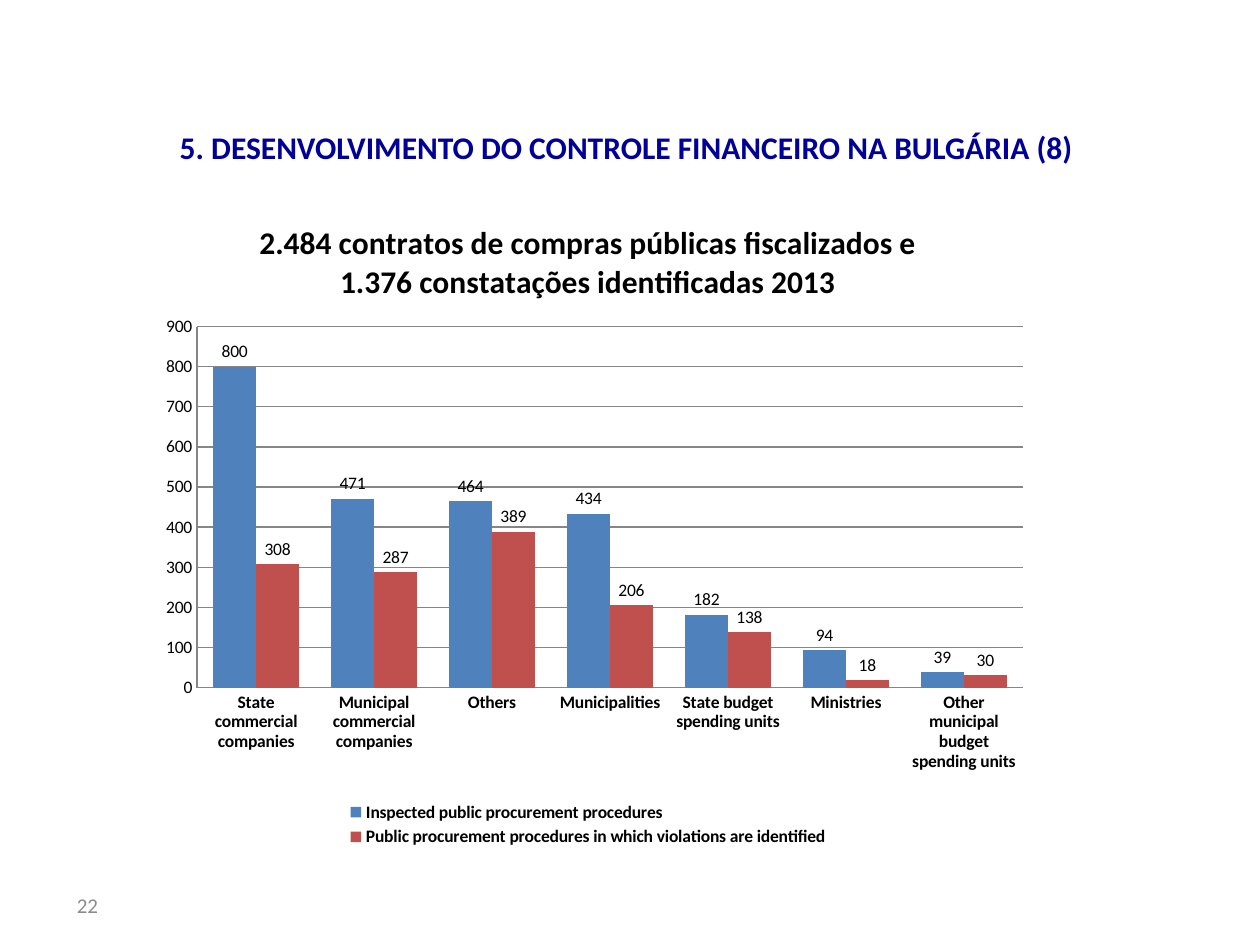
from lxml import etree
from pptx import Presentation
from pptx.chart.data import CategoryChartData as ChartData
from pptx.dml.color import RGBColor
from pptx.enum.chart import XL_CHART_TYPE as Kind, XL_LABEL_POSITION as Spot
from pptx.enum.chart import XL_LEGEND_POSITION as Side, XL_TICK_MARK as Tick
from pptx.enum.text import MSO_ANCHOR as Anchor, PP_ALIGN as Align
from pptx.oxml.ns import qn
from pptx.util import Cm, Pt

NAVY = RGBColor(0x00, 0x00, 0x99)
GREY = RGBColor(0x8C, 0x8C, 0x8C)
LINE = RGBColor(0x86, 0x86, 0x86)
BLACK = RGBColor(0x00, 0x00, 0x00)
BLUE = RGBColor(0x4F, 0x81, 0xBD)
RED = RGBColor(0xC0, 0x50, 0x4D)


def style(font, size, color, bold=False):
    font.name = "Calibri"
    font.size = Pt(size)
    font.bold = bold
    font.color.rgb = color


deck = Presentation()
deck.slide_width = Cm(25.4)
deck.slide_height = Cm(19.05)
slide = deck.slides.add_slide(deck.slide_layouts[6])

texts = [
    ("22", 1.3, 17.73, 5.92, 12, GREY, False, Align.LEFT),
    ("5. DESENVOLVIMENTO DO CONTROLE FINANCEIRO NA BULGÁRIA (8)",
     2.53, 2.46, 20.19, 18, NAVY, True, Align.CENTER),
]
for text, left, top, width, size, color, bold, align in texts:
    box = slide.shapes.add_textbox(Cm(left), Cm(top), Cm(width), Cm(1.02))
    frame = box.text_frame
    frame.word_wrap = True
    frame.vertical_anchor = Anchor.MIDDLE
    para = frame.paragraphs[0]
    para.alignment = align
    run = para.add_run()
    run.text = text
    style(run.font, size, color, bold)

data = ChartData()
data.categories = [
    "State commercial companies", "Municipal commercial companies", "Others",
    "Municipalities", "State budget spending units", "Ministries",
    "Other municipal budget spending units",
]
data.add_series("Inspected public procurement procedures",
                [800, 471, 464, 434, 182, 94, 39])
data.add_series("Public procurement procedures in which violations are identified",
                [308, 287, 389, 206, 138, 18, 30])
chart = slide.shapes.add_chart(Kind.COLUMN_CLUSTERED, Cm(2.9), Cm(3.94),
                               Cm(17.9), Cm(13.23), data).chart
style(chart.font, 10, BLACK)

chart.has_title = True
run = chart.chart_title.text_frame.paragraphs[0].add_run()
run.text = ("2.484 contratos de compras públicas fiscalizados e "
            "1.376 constatações identificadas 2013")
style(run.font, 18, BLACK, True)
chart.chart_title.include_in_layout = False

chart.has_legend = True
chart.legend.position = Side.BOTTOM
chart.legend.include_in_layout = False
style(chart.legend.font, 10, BLACK, True)

for axis, bold in [(chart.category_axis, True), (chart.value_axis, False)]:
    axis.major_tick_mark = Tick.NONE
    axis.minor_tick_mark = Tick.NONE
    axis.format.line.color.rgb = LINE
    style(axis.tick_labels.font, 10, BLACK, bold)
scale = chart.value_axis
scale.minimum_scale = 0
scale.maximum_scale = 900
scale.major_unit = 100
scale.has_major_gridlines = True
scale.major_gridlines.format.line.color.rgb = LINE

plot = chart.plots[0]
plot.gap_width = 75
plot.overlap = 0
plot.vary_by_categories = False
for series, color in zip(plot.series, [BLUE, RED]):
    series.format.fill.solid()
    series.format.fill.fore_color.rgb = color
    labels = series.data_labels
    labels.show_value = True
    labels.position = Spot.OUTSIDE_END
    style(labels.font, 10, BLACK)

area = chart._chartSpace.chart.plotArea
for old in area.findall(qn("c:layout")):
    area.remove(old)
layout = etree.Element(qn("c:layout"))
area.insert(0, layout)
manual = etree.SubElement(layout, qn("c:manualLayout"))
for tag, val in [("layoutTarget", "inner"), ("xMode", "edge"), ("yMode", "edge"),
                 ("x", "0.06"), ("y", "0.2"), ("w", "0.93"), ("h", "0.55")]:
    etree.SubElement(manual, qn("c:" + tag)).set("val", val)

deck.save("out.pptx")
